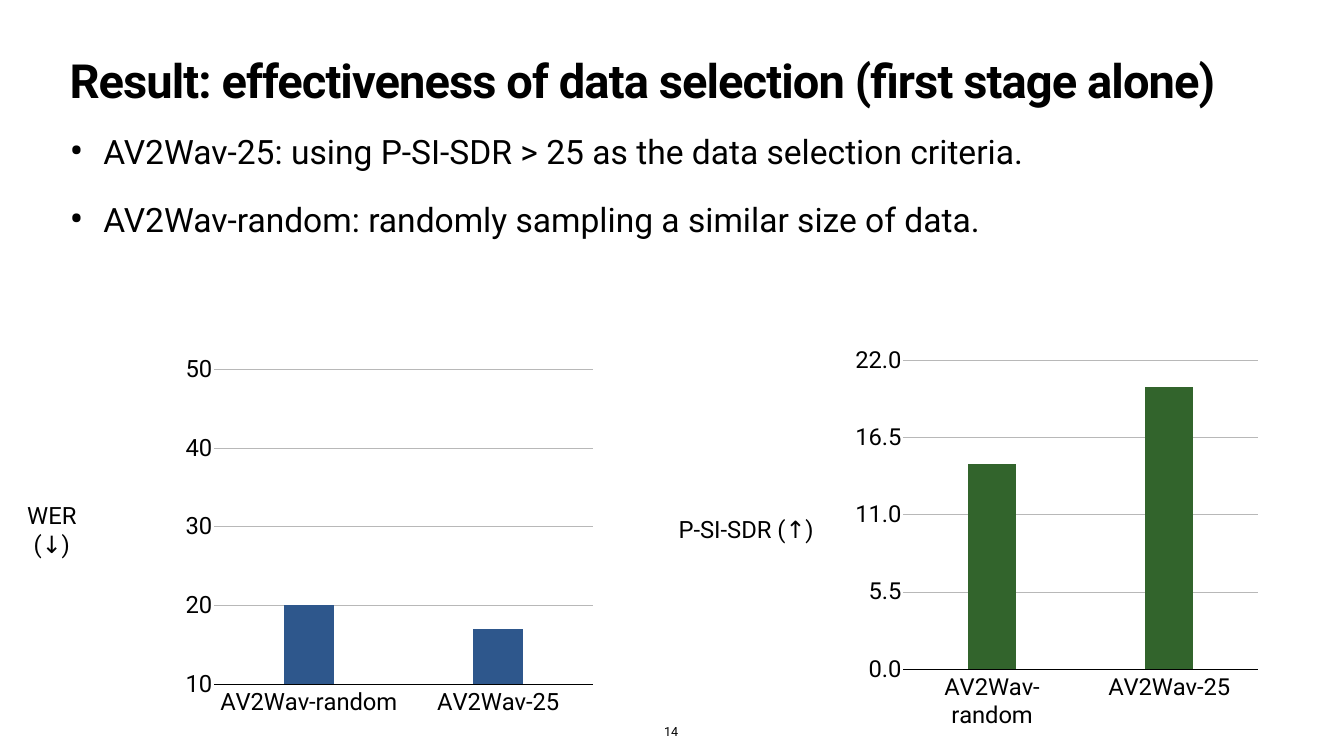
from dataclasses import dataclass

from lxml.etree import SubElement
from pptx import Presentation
from pptx.chart.data import CategoryChartData
from pptx.dml.color import RGBColor
from pptx.enum.chart import XL_CHART_TYPE, XL_TICK_LABEL_POSITION, XL_TICK_MARK
from pptx.enum.text import MSO_ANCHOR, PP_ALIGN
from pptx.oxml import parse_xml
from pptx.oxml.ns import nsdecls, qn
from pptx.util import Inches, Pt


@dataclass(frozen=True)
class Theme:
    font: str = "Roboto"
    ink: str = "000000"
    grid: str = "B8B8B8"
    wer: str = "2E578C"
    sdr: str = "32642C"
    title: float = 67.2
    body: float = 48
    label: float = 34
    page_number: float = 18


@dataclass(frozen=True)
class Area:
    """Position and size in percent of the slide."""
    left: float
    top: float
    width: float
    height: float

    def emu(self) -> tuple[int, int, int, int]:
        return (int(WIDTH * self.left / 100), int(HEIGHT * self.top / 100),
                int(WIDTH * self.width / 100), int(HEIGHT * self.height / 100))


@dataclass(frozen=True)
class Scale:
    low: float
    high: float
    step: float
    number_format: str


@dataclass(frozen=True)
class BarPanel:
    area: Area
    values: tuple[float, float]
    color: str
    scale: Scale
    gap: int
    plot: tuple[float, float, float, float]
    label: str
    label_area: Area
    wrap_label: bool


THEME = Theme()
WIDTH, HEIGHT = Inches(26.67), Inches(15)
MODELS = ("AV2Wav-random", "AV2Wav-25")
BULLETS = (
    "AV2Wav-25: using P-SI-SDR > 25 as the data selection criteria.",
    "AV2Wav-random: randomly sampling a similar size of data.",
)
PANELS = (
    BarPanel(Area(12.6, 45.27, 31.68, 51.13), (20, 17), THEME.wer,
             Scale(10, 50, 10, "General"), 280, (0.105, 0.071, 0.89, 0.813),
             "WER (↓)", Area(1.61, 67.8, 4.5, 4.47), True),
    BarPanel(Area(62.2, 45.27, 31.42, 51.13), (14.6, 20.1), THEME.sdr,
             Scale(0, 22, 5.5, "0.0"), 270, (0.16, 0.047, 0.84, 0.813),
             "P-SI-SDR (↑)", Area(50.14, 67.8, 10.76, 4.47), False),
)


def style_font(font, size: float, bold: bool = False) -> None:
    font.name, font.size, font.bold = THEME.font, Pt(size), bold
    font.color.rgb = RGBColor.from_string(THEME.ink)


def add_text(page, area: Area, lines: tuple[str, ...], size: float, *,
             align=PP_ALIGN.LEFT, anchor=MSO_ANCHOR.TOP,
             wrap: bool = True, bold: bool = False):
    frame = page.shapes.add_textbox(*area.emu()).text_frame
    frame.word_wrap, frame.vertical_anchor = wrap, anchor
    frame.margin_left = frame.margin_right = Inches(0.06)
    frame.margin_top = frame.margin_bottom = Inches(0.06)
    frame.text = "\n".join(lines)
    for para in frame.paragraphs:
        para.alignment = align
        style_font(para.font, size, bold)
    return frame


def add_bullet(para) -> None:
    para.line_spacing, para.space_before = 0.9, Pt(45)
    properties = para._p.get_or_add_pPr()
    properties.set("marL", str(Inches(0.67)))
    properties.set("indent", str(-Inches(0.67)))
    size = parse_xml(f'<a:buSzPct {nsdecls("a")} val="123000"/>')
    font = parse_xml(f'<a:buFont {nsdecls("a")} typeface="{THEME.font}"/>')
    mark = parse_xml(f'<a:buChar {nsdecls("a")} char="•"/>')
    defaults = properties.find(qn("a:defRPr"))
    for element in (size, font, mark):
        defaults.addprevious(element)


def set_plot_layout(chart, shares: tuple[float, float, float, float]) -> None:
    """Fix the inner plot rectangle as shares of the chart."""
    plot_area = chart._chartSpace.chart.plotArea
    for old in plot_area.findall(qn("c:layout")):
        plot_area.remove(old)
    layout = parse_xml(f'<c:layout {nsdecls("c")}/>')
    manual = SubElement(layout, qn("c:manualLayout"))
    settings = [("layoutTarget", "inner"), ("xMode", "edge"), ("yMode", "edge")]
    settings += zip("xywh", shares)
    for name, value in settings:
        SubElement(manual, qn(f"c:{name}")).set("val", str(value))
    plot_area.insert(0, layout)


def add_bar_panel(page, panel: BarPanel) -> None:
    data = CategoryChartData()
    data.categories = MODELS
    data.add_series("Series 1", panel.values)
    chart = page.shapes.add_chart(
        XL_CHART_TYPE.COLUMN_CLUSTERED, *panel.area.emu(), data).chart
    chart.has_legend = chart.has_title = False
    style_font(chart.font, THEME.label)
    set_plot_layout(chart, panel.plot)

    plot = chart.plots[0]
    plot.gap_width, plot.overlap, plot.vary_by_categories = panel.gap, -10, False
    fill = plot.series[0].format.fill
    fill.solid()
    fill.fore_color.rgb = RGBColor.from_string(panel.color)

    categories, values = chart.category_axis, chart.value_axis
    for axis in (categories, values):
        axis.major_tick_mark = axis.minor_tick_mark = XL_TICK_MARK.NONE
        style_font(axis.tick_labels.font, THEME.label)
    categories.tick_label_position = XL_TICK_LABEL_POSITION.LOW
    values.minimum_scale, values.maximum_scale = panel.scale.low, panel.scale.high
    values.major_unit = panel.scale.step
    values.tick_labels.number_format = panel.scale.number_format
    values.tick_labels.number_format_is_linked = False
    values.format.line.fill.background()
    values.has_major_gridlines = True
    for line, color in ((categories.format.line, THEME.ink),
                        (values.major_gridlines.format.line, THEME.grid)):
        line.width = Pt(1)
        line.color.rgb = RGBColor.from_string(color)

    add_text(page, panel.label_area, (panel.label,), THEME.label,
             align=PP_ALIGN.CENTER, anchor=MSO_ANCHOR.MIDDLE, wrap=panel.wrap_label)


def main() -> None:
    deck = Presentation()
    deck.slide_width, deck.slide_height = WIDTH, HEIGHT
    page = deck.slides.add_slide(deck.slide_layouts[6])

    title = add_text(page, Area(4.95, 7.87, 90.1, 10.47),
                     ("Result: effectiveness of data selection (first stage alone)",),
                     THEME.title, bold=True).paragraphs[0]
    title.line_spacing = 0.8
    title.runs[0].font._element.set("spc", "-130")

    body = add_text(page, Area(4.95, 17.53, 90.1, 60.2), BULLETS, THEME.body)
    for para in body.paragraphs:
        add_bullet(para)
    for panel in PANELS:
        add_bar_panel(page, panel)
    add_text(page, Area(48.69, 95.4, 2.5, 2.73), ("14",), THEME.page_number,
             align=PP_ALIGN.CENTER, anchor=MSO_ANCHOR.BOTTOM, wrap=False)
    deck.save("out.pptx")


if __name__ == "__main__":
    main()
